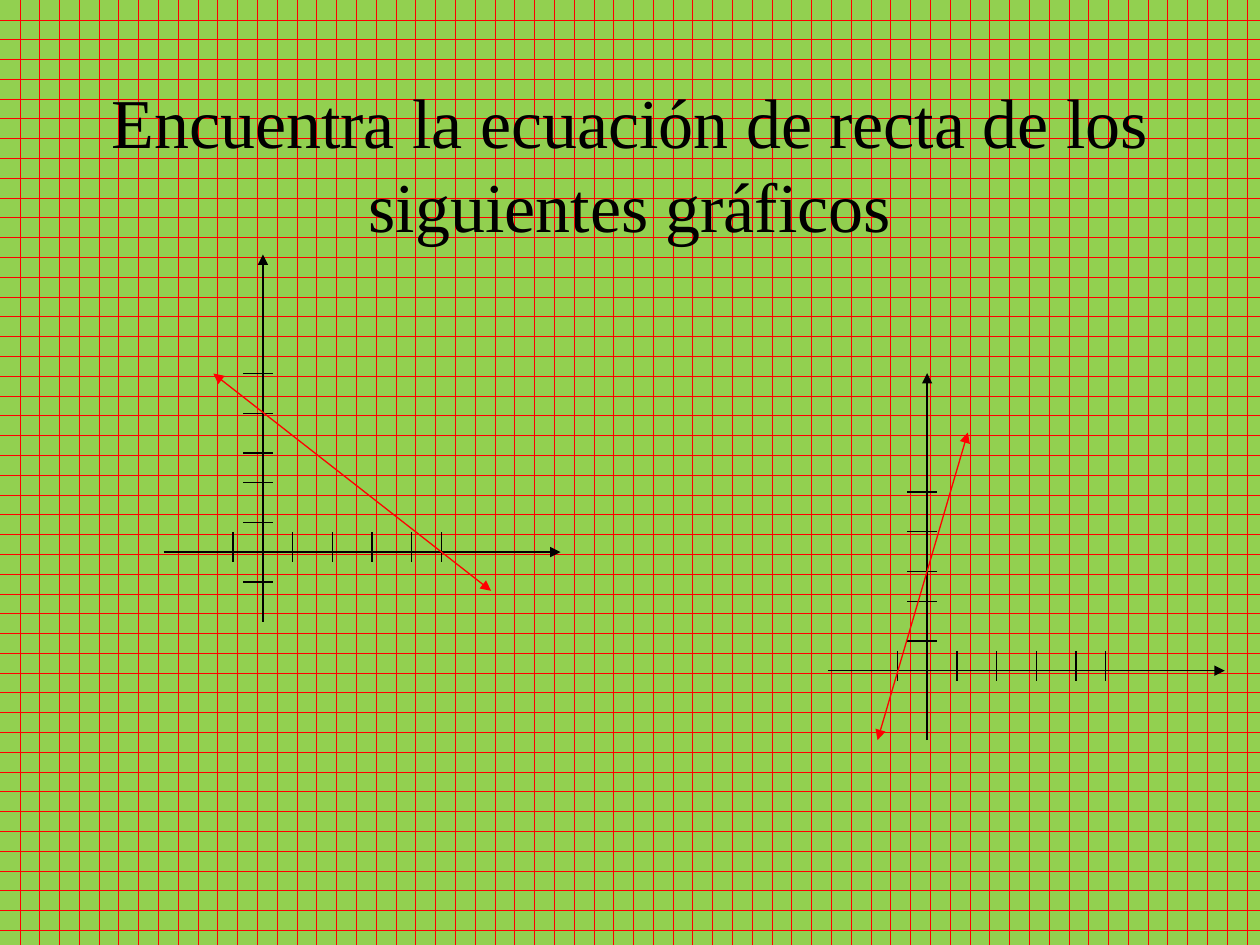
from lxml import etree
from pptx import Presentation
from pptx.dml.color import RGBColor
from pptx.enum.dml import MSO_PATTERN
from pptx.enum.shapes import MSO_CONNECTOR
from pptx.enum.text import MSO_ANCHOR, PP_ALIGN
from pptx.oxml.ns import qn
from pptx.util import Cm, Pt

BLACK, RED, GREEN = "000000", "FF0000", "92D050"
GRAPH_WIDTH, GRAPH_HEIGHT = 8, 7.4
ORIGIN_X, ORIGIN_Y = 2, 6
X_TICKS = (-0.6, 0.6, 1.4, 2.2, 3, 3.6)
Y_TICKS = (0.6, 1.4, 2, 2.8, 3.6)
TICK_BEFORE, TICK_AFTER = 0.4, 0.2


def color(value):
    return RGBColor.from_string(value)


def set_format(target, values):
    for name, value in values.items():
        setattr(target, name, value)


def add_background(slide):
    fill = slide.background.fill
    fill.patterned()
    fill.pattern = MSO_PATTERN.DOTTED_GRID
    fill.fore_color.rgb = color(RED)
    fill.back_color.rgb = color(GREEN)


def add_title(slide, left, top, width, height, text):
    title = slide.shapes.title
    set_format(title, {"left": Cm(left), "top": Cm(top),
                       "width": Cm(width), "height": Cm(height)})
    frame = title.text_frame
    frame.text = text
    set_format(frame, {"word_wrap": True, "vertical_anchor": MSO_ANCHOR.MIDDLE})
    paragraph = frame.paragraphs[0]
    paragraph.alignment = PP_ALIGN.CENTER
    font = paragraph.runs[0].font
    set_format(font, {"name": "Times New Roman", "size": Pt(40)})
    font.color.rgb = color(BLACK)


def add_line(shapes, start, end, line_color=BLACK, arrows=()):
    points = [Cm(value) for value in (*start, *end)]
    connector = shapes.add_connector(MSO_CONNECTOR.STRAIGHT, *points)
    connector.line.width = Pt(0.75)
    connector.line.color.rgb = color(line_color)
    for arrow in arrows:
        etree.SubElement(connector.line._ln, qn(f"a:{arrow}"), type="triangle")
    etree.SubElement(connector._element.spPr, qn("a:effectLst"))


def add_graph(slide, left, top, y_ticks, start, end):
    shapes = slide.shapes.add_group_shape().shapes

    def draw(x1, y1, x2, y2, **style):
        add_line(shapes, (left + x1, top + y1), (left + x2, top + y2), **style)

    draw(0, ORIGIN_Y, GRAPH_WIDTH, ORIGIN_Y, arrows=["tailEnd"])
    draw(ORIGIN_X, GRAPH_HEIGHT, ORIGIN_X, 0, arrows=["tailEnd"])
    for tick in X_TICKS:
        x = ORIGIN_X + tick
        draw(x, ORIGIN_Y - TICK_BEFORE, x, ORIGIN_Y + TICK_AFTER)
    for tick in y_ticks:
        y = ORIGIN_Y - tick
        draw(ORIGIN_X - TICK_BEFORE, y, ORIGIN_X + TICK_AFTER, y)
    draw(*start, *end, line_color=RED, arrows=["headEnd", "tailEnd"])


def main():
    presentation = Presentation()
    set_format(presentation, {"slide_width": Cm(25.4), "slide_height": Cm(19.05)})
    slide = presentation.slides.add_slide(presentation.slide_layouts[5])
    add_background(slide)
    add_title(slide, 1.9, 1.7, 21.6, 3.17,
              "Encuentra la ecuación de recta de los siguientes gráficos")
    add_graph(slide, 3.3, 5.13, (-0.6, *Y_TICKS), (1, 2.4), (6.6, 6.78))
    add_graph(slide, 16.69, 7.52, Y_TICKS, (2.82, 1.2), (1, 7.4))
    presentation.save("out.pptx")


if __name__ == "__main__":
    main()
